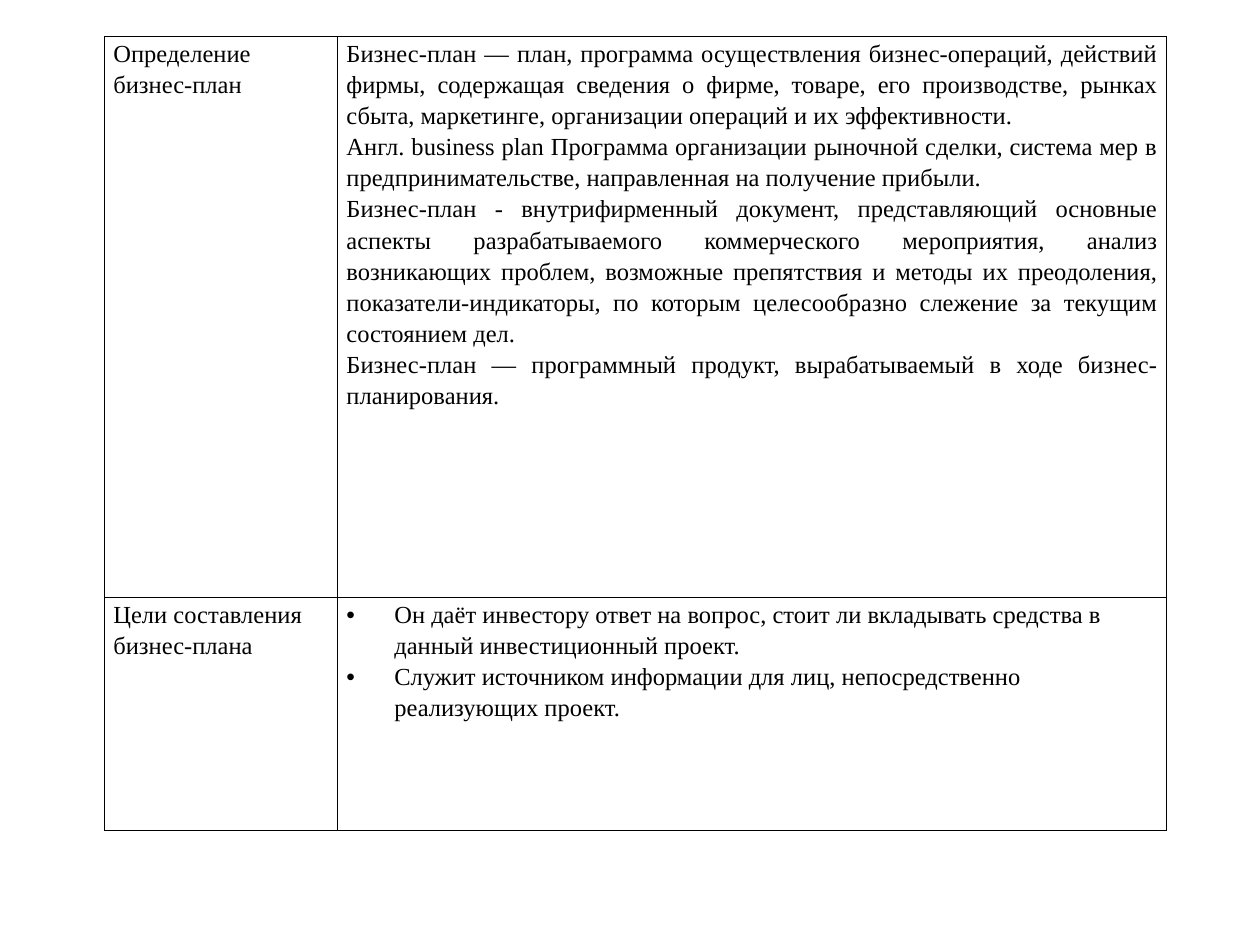
from lxml import etree
from pptx import Presentation
from pptx.dml.color import RGBColor
from pptx.enum.text import PP_ALIGN
from pptx.oxml.ns import qn
from pptx.util import Inches, Pt

LEFT, JUST = PP_ALIGN.LEFT, PP_ALIGN.JUSTIFY

# Each row: cells of (align, bulleted, paragraphs)
ROWS = [
    [
        (JUST, False, ["Определение бизнес-план"]),
        (JUST, False, [
            "Бизнес-план — план, программа осуществления бизнес-операций, действий фирмы, "
            "содержащая сведения о фирме, товаре, его производстве, рынках сбыта, "
            "маркетинге, организации операций и их эффективности.",
            "Англ. business plan Программа организации рыночной сделки, система мер в "
            "предпринимательстве, направленная на получение прибыли.",
            "Бизнес-план - внутрифирменный документ, представляющий основные аспекты "
            "разрабатываемого коммерческого мероприятия, анализ возникающих проблем, "
            "возможные препятствия и методы их преодоления, показатели-индикаторы, "
            "по которым целесообразно слежение за текущим состоянием дел.",
            "Бизнес-план — программный продукт, вырабатываемый в ходе "
            "бизнес-планирования.",
        ]),
    ],
    [
        (LEFT, False, ["Цели составления бизнес-плана"]),
        (LEFT, True, [
            "Он даёт инвестору ответ на вопрос, стоит ли вкладывать средства в данный "
            "инвестиционный проект.",
            "Служит источником информации для лиц, непосредственно реализующих проект.",
        ]),
    ],
]
WIDTHS = [1.85, 6.58]
HEIGHTS = [4.45, 1.85]
THEME = {"font": "Times New Roman", "size": 14, "ink": "000000",
         "line": 1, "space": 1.15, "pad": 0.07, "indent": 0.38}


def add_bullet(para):
    props = para._p.get_or_add_pPr()
    indent = Inches(THEME["indent"])
    props.set("marL", str(indent))
    props.set("indent", str(-indent))
    etree.SubElement(props, qn("a:buFont"), typeface="Arial")
    etree.SubElement(props, qn("a:buChar"), char="•")


def set_borders(cell):
    props = cell._tc.get_or_add_tcPr()
    for spot, side in enumerate(("a:lnL", "a:lnR", "a:lnT", "a:lnB")):
        line = etree.Element(qn(side), w=str(Pt(THEME["line"])))
        fill = etree.SubElement(line, qn("a:solidFill"))
        etree.SubElement(fill, qn("a:srgbClr"), val=THEME["ink"])
        props.insert(spot, line)


def fill_cell(cell, align, bulleted, texts):
    cell.margin_left = cell.margin_right = Inches(THEME["pad"])
    cell.margin_top = cell.margin_bottom = 0
    cell.fill.background()
    set_borders(cell)
    frame = cell.text_frame
    frame.text = "\n".join(texts)
    for para in frame.paragraphs:
        para.alignment = align
        para.line_spacing = THEME["space"]
        if bulleted:
            add_bullet(para)
        for run in para.runs:
            run.font.name = THEME["font"]
            run.font.size = Pt(THEME["size"])
            run.font.color.rgb = RGBColor.from_string(THEME["ink"])


def main():
    deck = Presentation()
    deck.slide_width, deck.slide_height = Inches(10), Inches(7.5)
    slide = deck.slides.add_slide(deck.slide_layouts[6])
    table = slide.shapes.add_table(
        len(ROWS), len(WIDTHS), Inches(0.83), Inches(0.29),
        Inches(sum(WIDTHS)), Inches(sum(HEIGHTS))).table
    table.first_row = table.horz_banding = False
    for col, width in zip(table.columns, WIDTHS):
        col.width = Inches(width)
    for row, height, cells in zip(table.rows, HEIGHTS, ROWS):
        row.height = Inches(height)
        for cell, content in zip(row.cells, cells):
            fill_cell(cell, *content)
    deck.save("out.pptx")


if __name__ == "__main__":
    main()
